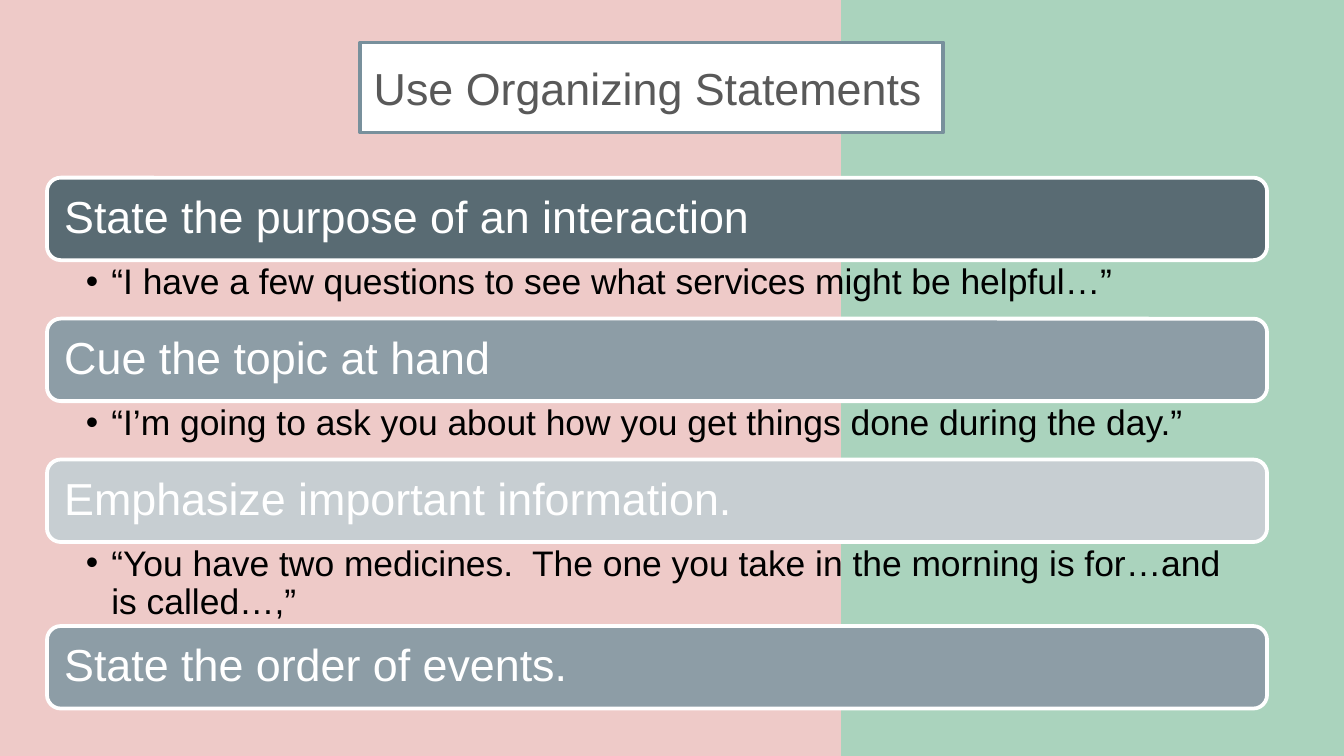
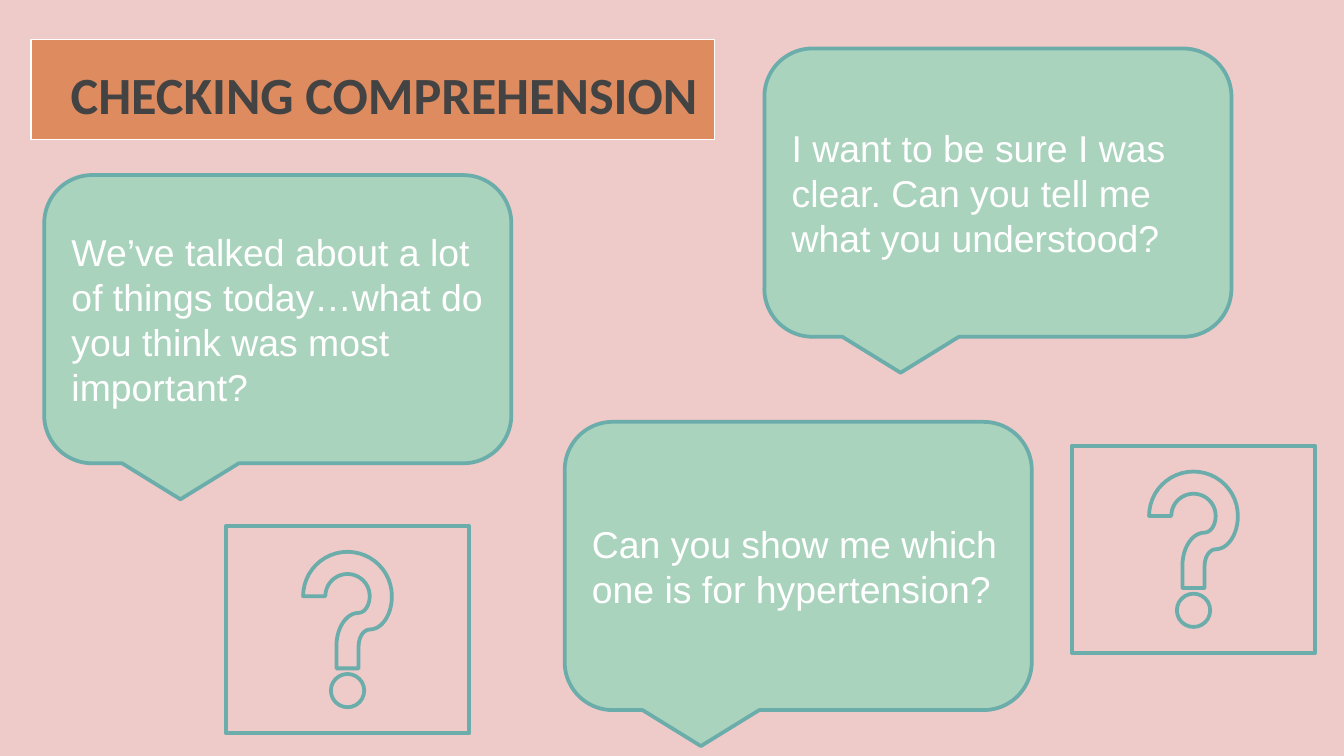
from pptx import Presentation
from pptx.dml.color import RGBColor
from pptx.enum.shapes import MSO_SHAPE as Kind
from pptx.enum.text import MSO_ANCHOR as Anchor, MSO_AUTO_SIZE as Fit, PP_ALIGN as Align
from pptx.oxml.ns import qn
from pptx.util import Pt
from lxml.etree import SubElement

# Shared colours and sizes
PINK, GREEN, TEAL, WHITE = "EECAC8", "AAD3BD", "6AADAA", "FFFFFF"
SLATE, MID, PALE, EDGE, RUST = "596B73", "8D9DA6", "C7CED2", "78909C", "DF8B60"
WIDE, HIGH = 720, 405
BAR = 44.2

ROWS = [
    ("State the purpose of an interaction", SLATE, 31.3,
     "“I have a few questions to see what services might be helpful…”"),
    ("Cue the topic at hand", MID, 31.3,
     "“I’m going to ask you about how you get things done during the day.”"),
    ("Emphasize important information.", PALE, 45,
     "“You have two medicines.  The one you take in the morning is for…"
     "and is called…,”"),
    ("State the order of events.", MID, 0, None),
]
CALLS = [
    (23.7, 93.8, "We’ve talked about a lot of things today…"
     "what do you think was most important?"),
    (409.5, 26, "I want to be sure I was clear. Can you tell me what you understood?"),
    (302.5, 226, "Can you show me which one is for hypertension?"),
]
HELPS = [(121, 281.8), (574.2, 238.8)]


def tint(code):
    return RGBColor.from_string(code)


def assign(item, values):
    for name, value in values.items():
        setattr(item, name, value)


def paint(shape, fill=None, line=None, width=2):
    if fill:
        shape.fill.solid()
        shape.fill.fore_color.rgb = tint(fill)
    else:
        shape.fill.background()
    if line:
        shape.line.color.rgb = tint(line)
        shape.line.width = Pt(width)
    else:
        shape.line.fill.background()


def write(shape, text, size, color, face="Arial", bold=False, space=1.0,
          align=Align.LEFT, anchor=Anchor.MIDDLE, pads=(7.2, 7.2, 7.2, 7.2)):
    frame = shape.text_frame
    sides = ("margin_left", "margin_top", "margin_right", "margin_bottom")
    assign(frame, dict(zip(sides, map(Pt, pads))))
    assign(frame, {"word_wrap": True, "auto_size": Fit.NONE,
                   "vertical_anchor": anchor})
    para = frame.paragraphs[0]
    assign(para, {"alignment": align, "line_spacing": space})
    run = para.add_run()
    run.text = text
    assign(run.font, {"name": face, "size": Pt(size), "bold": bold})
    run.font.color.rgb = tint(color)
    return para


def draw(slide, kind, box, **look):
    shape = slide.shapes.add_shape(kind, *map(Pt, box))
    shape.shadow.inherit = False
    paint(shape, **look)
    return shape


def head(slide, box, text, look, style):
    title = slide.shapes.title
    assign(title, dict(zip(("left", "top", "width", "height"), map(Pt, box))))
    paint(title, **look)
    return write(title, text, **style)


def quote(slide, box, text):
    note = slide.shapes.add_textbox(*map(Pt, box))
    para = write(note, text, 19, "000000", space=0.9, anchor=Anchor.TOP,
                 pads=(20.8, 2, 13.8, 2))
    props = para._p.get_or_add_pPr()
    props.set("marL", str(Pt(13.7)))
    props.set("indent", str(-Pt(13.7)))
    SubElement(props, qn("a:buFont")).set("typeface", "Arial")
    SubElement(props, qn("a:buChar")).set("char", "•")


def stack(slide, left, top, width):
    """Bars with their quotes, one below the other."""
    for text, fill, drop, words in ROWS:
        bar = draw(slide, Kind.ROUNDED_RECTANGLE, (left, top, width, BAR),
                   fill=fill, line=WHITE)
        write(bar, text, 24, WHITE, space=0.9)
        top += BAR
        if words:
            quote(slide, (left, top, width, drop), words)
        top += drop


def organize(slide):
    # Side panel, kept behind the title
    panel = draw(slide, Kind.RECTANGLE, (450.6, 0, WIDE - 450.6, HIGH), fill=GREEN)
    slide.shapes.title._element.addprevious(panel._element)
    head(slide, (193, 22.8, 312.3, 48.2), "Use Organizing Statements",
         {"fill": WHITE, "line": EDGE}, {"size": 24, "color": "595959"})
    stack(slide, 25.2, 95.2, 653.6)


def check(slide):
    para = head(slide, (16.6, 21.2, 366.2, 53.6), "CHECKING COMPREHENSION",
                {"fill": RUST, "line": WHITE, "width": 0.75},
                {"size": 28, "color": "434343", "face": "Calibri", "bold": True,
                 "space": 1.15, "align": Align.CENTER, "anchor": Anchor.TOP})
    para._p.get_or_add_pPr().set("marL", str(Pt(12)))
    # Speech bubbles
    for left, top, text in CALLS:
        bubble = draw(slide, Kind.ROUNDED_RECTANGULAR_CALLOUT,
                      (left, top, 250.2, 154.4), fill=GREEN, line=TEAL)
        write(bubble, text, 20, WHITE, pads=(7.2, 3.6, 7.2, 3.6))
    # Question marks
    for left, top in HELPS:
        draw(slide, Kind.ACTION_BUTTON_HELP, (left, top, 130.4, 111), line=TEAL)


def main():
    deck = Presentation()
    assign(deck, {"slide_width": Pt(WIDE), "slide_height": Pt(HIGH)})
    back = deck.slide_master.background.fill
    back.solid()
    back.fore_color.rgb = tint(PINK)
    for build in (organize, check):
        build(deck.slides.add_slide(deck.slide_layouts[5]))
    deck.save("out.pptx")


if __name__ == "__main__":
    main()
